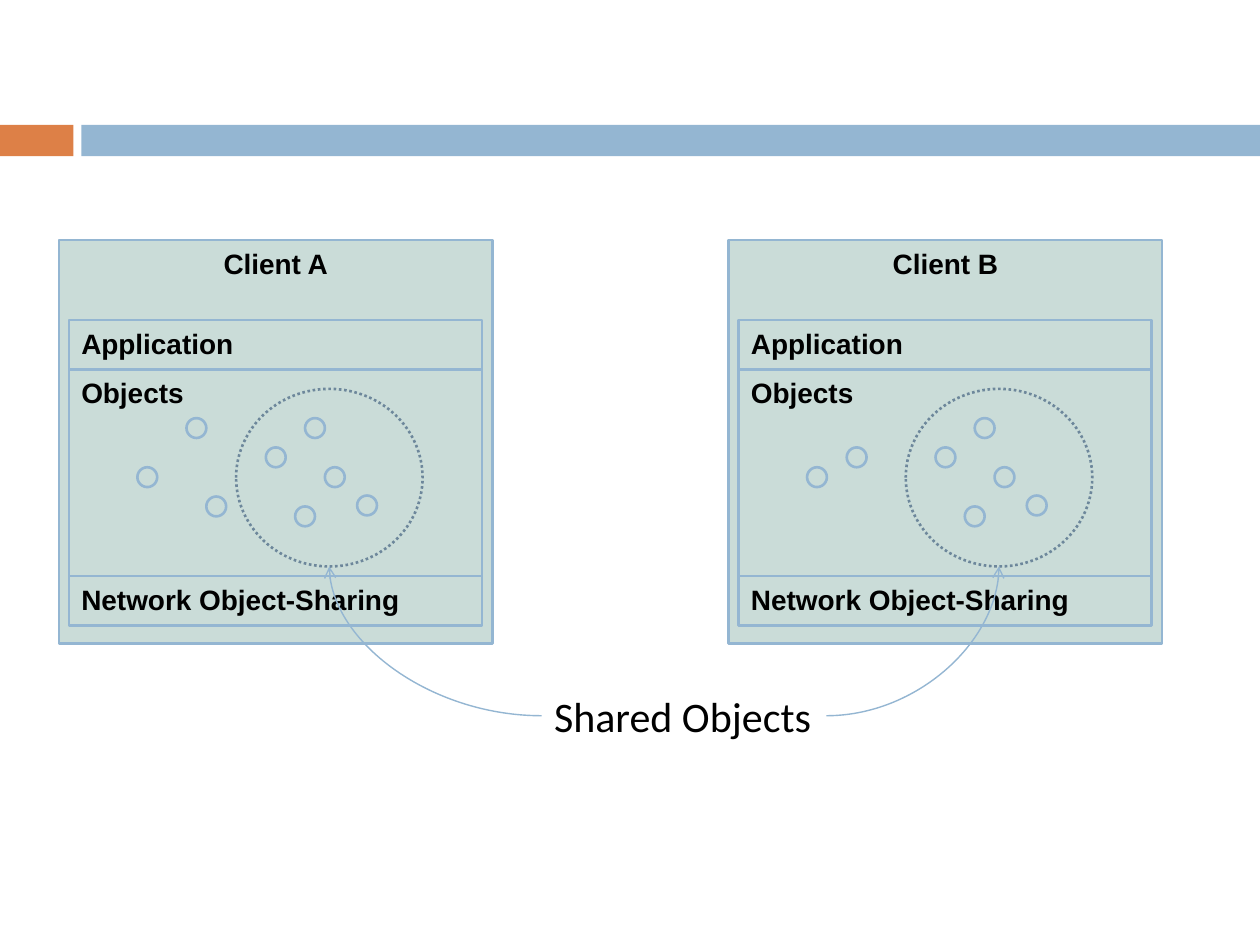
from lxml import etree
from pptx import Presentation
from pptx.dml.color import RGBColor
from pptx.enum.dml import MSO_LINE
from pptx.enum.shapes import MSO_CONNECTOR, MSO_SHAPE as SHAPE
from pptx.enum.text import MSO_ANCHOR as ANCHOR, MSO_AUTO_SIZE, PP_ALIGN as ALIGN
from pptx.oxml.ns import qn
from pptx.util import Cm, Pt

BLUE, ORANGE, SAGE, SLATE = "94B6D2", "DD8047", "CADCD8", "6D879B"


def rgb(value):
    return RGBColor.from_string(value)


def write(tf, text, font="Arial", size=16, bold=True, color="000000", align=ALIGN.LEFT):
    p = tf.paragraphs[0]
    p.alignment = align
    r = p.add_run()
    r.text = text
    r.font.name, r.font.size, r.font.bold = font, Pt(size), bold
    r.font.color.rgb = rgb(color)


class Diagram:
    """Style and drawing methods for one slide; lengths in centimetres."""
    fill, line, line_width = SAGE, BLUE, 1.5

    def __init__(self, s):
        self.s = s

    def shape(self, kind, x, y, w, h, fill=None, line=None):
        sp = self.s.shapes.add_shape(kind, Cm(x), Cm(y), Cm(w), Cm(h))
        sp.shadow.inherit = False
        if fill:
            sp.fill.solid()
            sp.fill.fore_color.rgb = rgb(fill)
        else:
            sp.fill.background()
        if line:
            sp.line.color.rgb = rgb(line)
            sp.line.width = Pt(self.line_width)
        else:
            sp.line.fill.background()
        return sp

    def band(self, x, w, color):
        self.shape(SHAPE.RECTANGLE, x, 2.52, w, 0.63, color)

    def box(self, x, y, w, h, text, **fmt):
        sp = self.shape(SHAPE.RECTANGLE, x, y, w, h, self.fill, self.line)
        sp.text_frame.word_wrap = True
        sp.text_frame.vertical_anchor = ANCHOR.TOP
        write(sp.text_frame, text, **fmt)

    def dot(self, x, y):
        self.shape(SHAPE.OVAL, x, y, 0.4, 0.4, self.fill, self.line)

    def shared_ring(self, x, y, w, h):
        sp = self.shape(SHAPE.OVAL, x, y, w, h, line=SLATE)
        sp.line.dash_style = MSO_LINE.ROUND_DOT

    def label(self, x, y, w, h, text, **fmt):
        tf = self.s.shapes.add_textbox(Cm(x), Cm(y), Cm(w), Cm(h)).text_frame
        tf.word_wrap = False
        tf.auto_size = MSO_AUTO_SIZE.SHAPE_TO_FIT_TEXT
        write(tf, text, **fmt)

    def curved_arrow(self, x1, y1, x2, y2):
        c = self.s.shapes.add_connector(MSO_CONNECTOR.CURVE, Cm(x1), Cm(y1), Cm(x2), Cm(y2))
        c.line.color.rgb = rgb(self.line)
        c.line.width = Pt(0.79)
        sp_pr = c._element.spPr
        sp_pr.find(qn("a:prstGeom")).set("prst", "curvedConnector2")
        etree.SubElement(c.line._get_or_add_ln(), qn("a:tailEnd"), type="arrow")
        etree.SubElement(sp_pr, qn("a:effectLst"))

    def client(self, dx, name, own_dots):
        self.box(1.19 + dx, 4.84, 8.74, 8.13, name, align=ALIGN.CENTER)
        # Stacked layers
        y = 6.45
        for text, h in LAYERS:
            self.box(1.39 + dx, y, 8.33, h, text)
            y += h
        # Objects, private and shared
        for x, y in SHARED_DOTS + own_dots:
            self.dot(x + dx, y)


LAYERS = [("Application", 1), ("Objects", 4.16), ("Network Object-Sharing", 1)]
SHARED_DOTS = [(5.36, 9.02), (5.95, 10.21), (6.55, 9.42), (6.15, 8.43), (7.2, 9.99)]
CLIENTS = [
    ("Client A", [(2.77, 9.42), (4.16, 10.01), (3.76, 8.43)]),
    ("Client B", [(2.77, 9.42), (3.57, 9.02)]),
]
CLIENT_STEP = 13.5


def main():
    prs = Presentation()
    prs.slide_width, prs.slide_height = Cm(25.4), Cm(19.05)
    d = Diagram(prs.slides.add_slide(prs.slide_layouts[6]))

    # Header bands
    d.band(0, 1.48, ORANGE)
    d.band(1.64, 23.76, BLUE)

    # Clients
    for i, (name, own_dots) in enumerate(CLIENTS):
        d.client(i * CLIENT_STEP, name, own_dots)

    # Shared objects: rings, label and arrows
    for i in range(len(CLIENTS)):
        d.shared_ring(4.76 + i * CLIENT_STEP, 7.84, 3.76, 3.58)
    d.label(10.92, 13.79, 5.74, 1.28, "Shared Objects", font="Calibri", size=24, bold=False)
    for i, start_x in enumerate((10.92, 16.66)):
        d.curved_arrow(start_x, 14.43, 6.64 + i * CLIENT_STEP, 11.42)

    prs.save("out.pptx")


if __name__ == "__main__":
    main()
